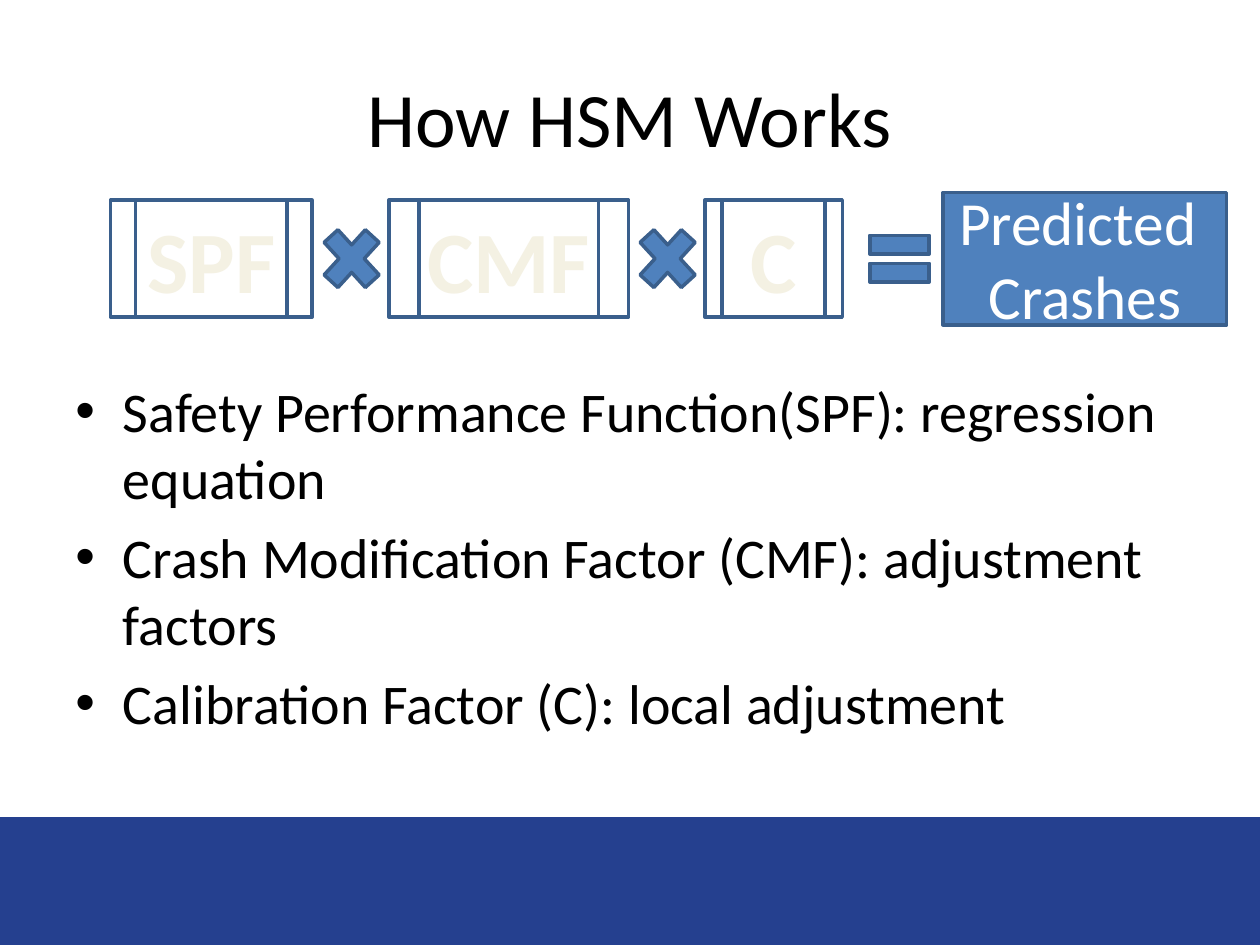
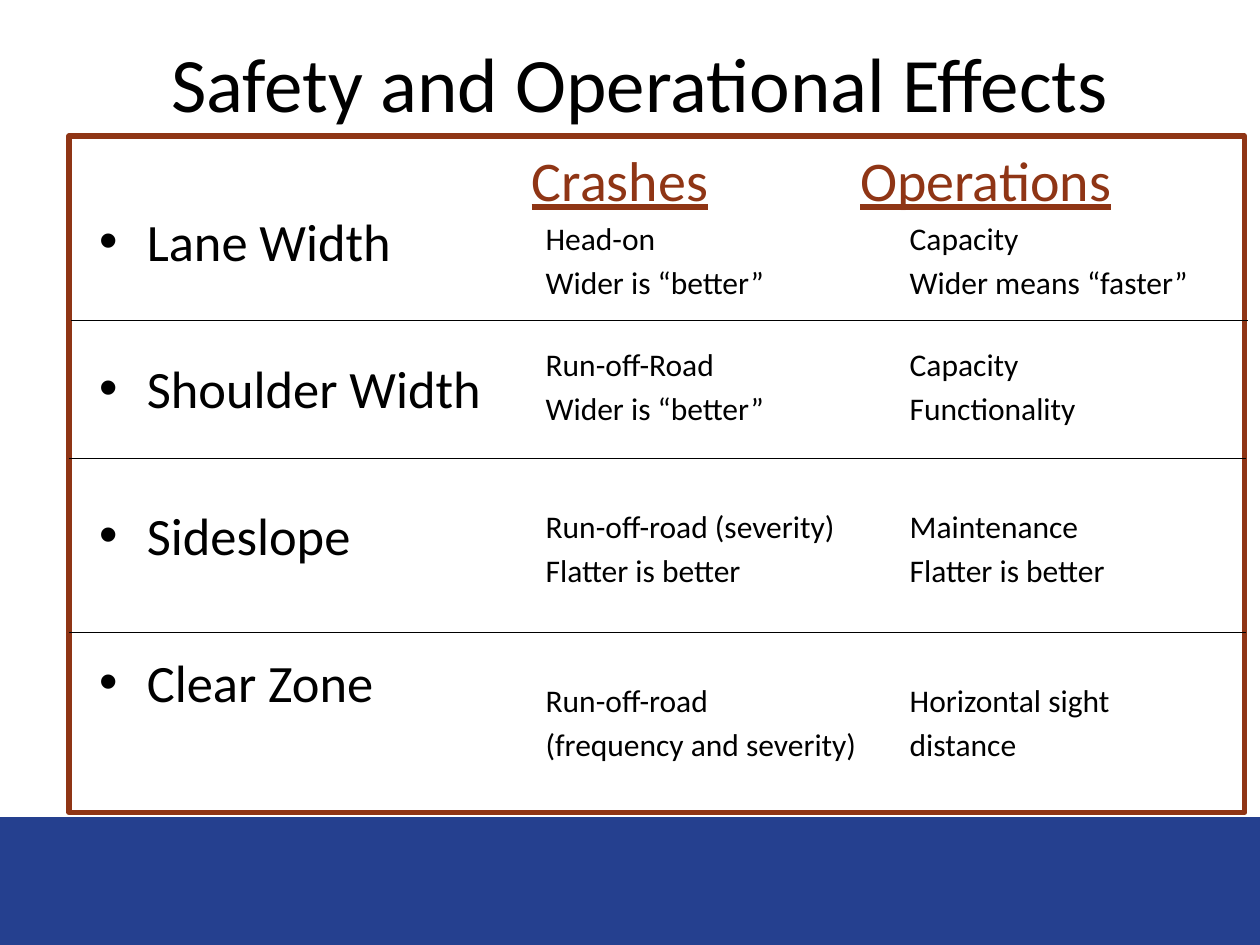
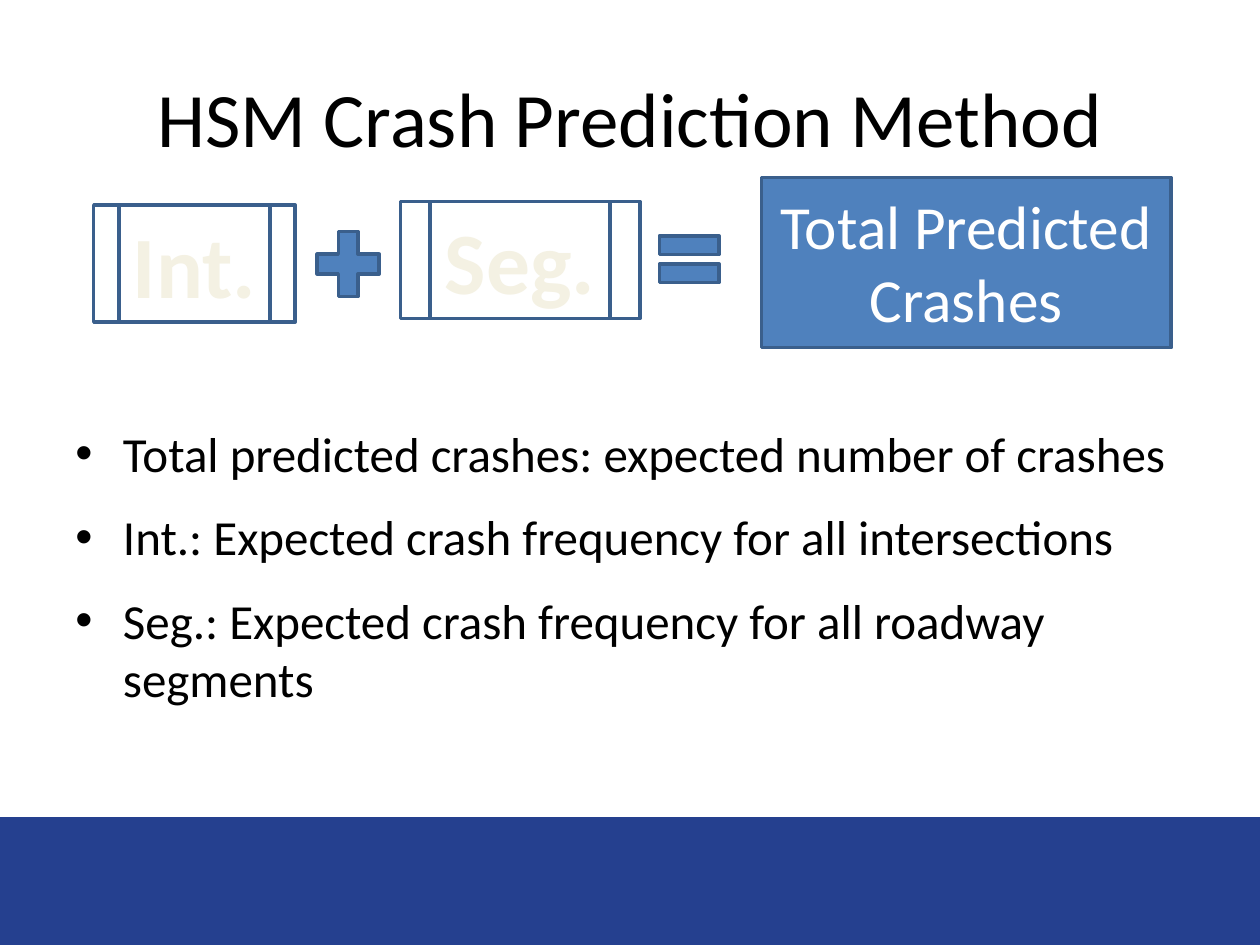
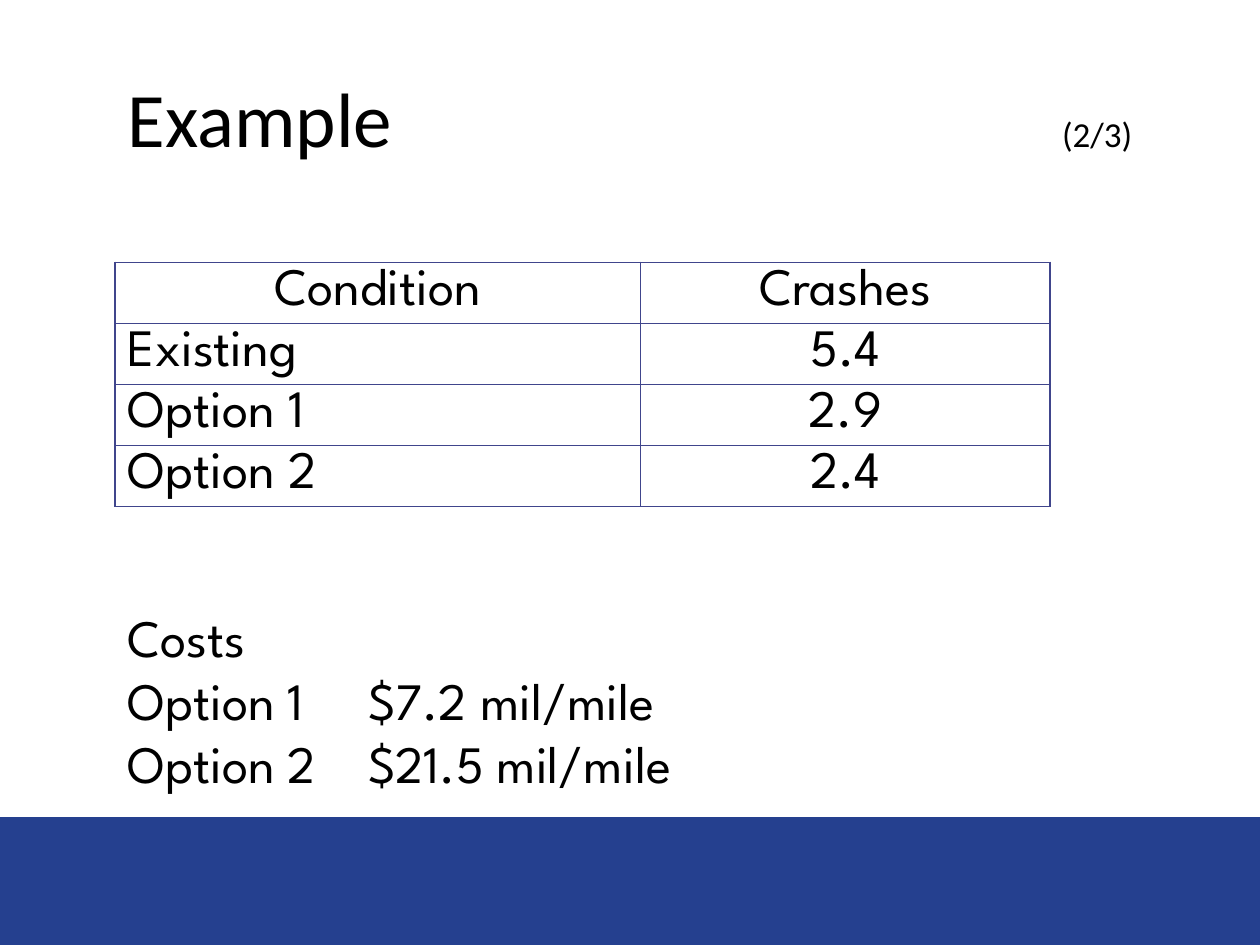
import pptx
import pptx.util
import pptx.dml.color
import pptx.enum.shapes
import pptx.enum.text
import pptx.oxml.ns
from lxml import etree

Cm = pptx.util.Cm
Pt = pptx.util.Pt
KIND = pptx.enum.shapes.MSO_SHAPE
ALIGN = pptx.enum.text.PP_ALIGN
ANCHOR = pptx.enum.text.MSO_ANCHOR
FIT = pptx.enum.text.MSO_AUTO_SIZE

BLACK, WHITE, CREAM = "000000", "FFFFFF", "F4F1E3"
NAVY, BLUE, EDGE = "25408F", "4F81BD", "3A5F8C"
RUST, GRID = "8F3515", "40458C"
SANS, ROUND = "Calibri", "League Spartan"
TITLE = (1.27, 0.76, 22.86, 3.18)
INDENT = 0.96
SIGNS = {
    "×": (KIND.MATH_MULTIPLY, 1.6, 1.75),
    "+": (KIND.MATH_PLUS, 1.7, 1.78),
    "=": (KIND.MATH_EQUAL, 1.63, 1.6),
}


def color(code):
    return pptx.dml.color.RGBColor.from_string(code)


def child(node, tag, **attrs):
    item = etree.SubElement(node, pptx.oxml.ns.qn("a:" + tag))
    for key, value in attrs.items():
        item.set(key, str(value))
    return item


def style(para, size, ink=BLACK, face=SANS, bold=False):
    font = para.font
    font.size = Pt(size)
    font.name = face
    font.bold = bold
    font.color.rgb = color(ink)


def bullet(para):
    props = para._p.get_or_add_pPr()
    props.set("marL", str(Cm(INDENT)))
    props.set("indent", str(-Cm(INDENT)))
    child(props, "buFont", typeface="Arial")
    child(props, "buChar", char="•")


def tabs(para, stops):
    group = child(para._p.get_or_add_pPr(), "tabLst")
    for stop in stops:
        child(group, "tab", pos=Cm(stop), algn="l")


def text(slide, box, lines, size, ink=BLACK, face=SANS, bold=False,
         align=ALIGN.LEFT, gap=0, dots=False, stops=(), wrap=True):
    frame = slide.shapes.add_textbox(*map(Cm, box)).text_frame
    frame.word_wrap = wrap
    for index, line in enumerate(lines):
        para = frame.add_paragraph() if index else frame.paragraphs[0]
        para.text = line
        para.alignment = align
        if dots:
            bullet(para)
        if stops:
            tabs(para, stops)
        if index and gap:
            para.space_before = Pt(gap)
        style(para, size, ink, face, bold)
    return frame


def shape(slide, kind, box, fill=None, edge=EDGE, width=2):
    item = slide.shapes.add_shape(kind, *map(Cm, box))
    item.shadow.inherit = False
    if fill:
        item.fill.solid()
        item.fill.fore_color.rgb = color(fill)
    else:
        item.fill.background()
    item.line.color.rgb = color(edge)
    item.line.width = Pt(width)
    return item


def rule(slide, left, top, width):
    line = slide.shapes.add_connector(
        pptx.enum.shapes.MSO_CONNECTOR.STRAIGHT,
        Cm(left), Cm(top), Cm(left + width), Cm(top))
    line.line.color.rgb = color(BLACK)
    line.line.width = Pt(0.75)
    child(line._element.spPr, "effectLst")


def page(deck, title, box=TITLE, stops=()):
    slide = deck.slides.add_slide(deck.slide_layouts[6])
    shape(slide, KIND.RECTANGLE, (0, 16.51, 25.4, 2.54), NAVY, NAVY)
    align = ALIGN.LEFT if stops else ALIGN.CENTER
    frame = text(slide, box, [title], 44, align=align, stops=stops)
    frame.vertical_anchor = ANCHOR.MIDDLE
    return slide, frame


def label(slide, mid, center, width, height, lines, size, ink, bold):
    box = (center - width / 2, mid - height / 2, width, height)
    frame = text(slide, box, lines, size, ink, bold=bold,
                 align=ALIGN.CENTER, wrap=False)
    frame.auto_size = FIT.SHAPE_TO_FIT_TEXT


def formula(slide, box, terms, signs, total):
    left, top, width, height = box
    mid = top + height / 2
    for name, shift, drop, span, wide in terms:
        shape(slide, KIND.FLOWCHART_PREDEFINED_PROCESS,
              (left + shift, mid + drop - 1.18, span, 2.36))
        label(slide, mid + drop, left + shift + span / 2, wide, 2.39,
              [name], 50, CREAM, True)
    for sign, shift, drop in signs:
        kind, wide, high = SIGNS[sign]
        shape(slide, kind,
              (left + shift, mid + drop - high / 2, wide, high), BLUE)
    lines, span = total
    start = left + width - span
    shape(slide, KIND.FLOWCHART_PROCESS, (start, top, span, height), BLUE)
    label(slide, mid, start + span / 2, span, 3.25, lines, 35, WHITE, False)


def works(deck):
    slide, _ = page(deck, "How HSM Works")
    text(slide, (1.27, 7.47, 22.86, 9.55), [
        "Safety Performance Function(SPF): regression equation",
        "Crash Modification Factor (CMF): adjustment factors",
        "Calibration Factor (C): local adjustment",
    ], 32, gap=6.4, dots=True)
    formula(slide, (2.23, 3.88, 22.5, 2.67),
            [("SPF", 0, 0, 4.06, 3.12), ("CMF", 5.61, 0, 4.83, 3.84),
             ("C", 11.98, 0, 2.77, 1.45)],
            [("×", 4.06, 0), ("×", 10.43, 0), ("=", 15.09, 0)],
            (["Predicted ", "Crashes"], 5.72))


def matrix(slide, box):
    left, top, width, height = box
    text(slide, (left + 0.36, top + 1.35, 21.59, 11.43),
         ["Lane Width", "Shoulder Width", "Sideslope", "Clear Zone"],
         30, gap=48, dots=True)
    rows = [
        (3.6, "Head-on", "Capacity"),
        (3.6, "Wider is “better”", "Wider means “faster”"),
        (24.9, "Run-off-Road", "Capacity"),
        (3.6, "Wider is “better”", "Functionality"),
        (46, "Run-off-road (severity)", "Maintenance"),
        (3.6, "Flatter is better", "Flatter is better"),
        (52.6, "Run-off-road", "Horizontal sight"),
        (3.6, "(frequency and severity)", "distance"),
    ]
    frame = text(slide, (left + 9.08, top + 0.07, 14.9, 12.9),
                 ["Crashes\tOperations"], 32, RUST, stops=[6.62])
    frame.paragraphs[0].font.underline = True
    for gap, crash, effect in rows:
        para = frame.add_paragraph()
        para.text = f"\t{crash}\t{effect}"
        tabs(para, [0.28, 7.62])
        para.space_before = Pt(gap)
        style(para, 18)
    shape(slide, KIND.RECTANGLE, box, edge=RUST, width=3)
    for shift, drop in [(0.05, 3.72), (0, 6.5), (0, 10.01)]:
        rule(slide, left + shift, top + drop, width + 0.02)


def effects(deck):
    slide, _ = page(deck, "Safety and Operational Effects",
                    (1.47, 0.25, 22.86, 2.79))
    matrix(slide, (1.39, 2.74, 23.7, 13.64))


def method(deck):
    slide, _ = page(deck, "HSM Crash Prediction Method")
    text(slide, (1.27, 8.41, 22.86, 8.61), [
        "Total predicted crashes: expected number of crashes",
        "Int.: Expected crash frequency for all intersections",
        "Seg.: Expected crash frequency for all roadway segments",
    ], 28, gap=14, dots=True)
    formula(slide, (1.89, 3.58, 21.72, 3.43),
            [("Int.", 0, 0.02, 4.06, 3.02),
             ("Seg.", 6.18, -0.05, 4.83, 3.58)],
            [("+", 4.28, 0.03), ("=", 11.19, -0.07)],
            (["Total Predicted ", "Crashes"], 8.26))


def border(cell):
    props = cell._tc.get_or_add_tcPr()
    for side in ("lnL", "lnR", "lnT", "lnB"):
        line = child(props, side, w=Pt(1))
        child(child(line, "solidFill"), "srgbClr", val=GRID)


def grid(slide, box, spans, rows):
    table = slide.shapes.add_table(
        len(rows), len(spans), *map(Cm, box)).table
    table.first_row = table.horz_banding = False
    for col, span in zip(table.columns, spans):
        col.width = Cm(span)
    for top, row in enumerate(rows):
        for side, word in enumerate(row):
            cell = table.cell(top, side)
            border(cell)
            cell.margin_bottom = Cm(-0.2)
            cell.fill.solid()
            cell.fill.fore_color.rgb = color(WHITE)
            para = cell.text_frame.paragraphs[0]
            para.text = word
            center = side or not top
            para.alignment = ALIGN.CENTER if center else ALIGN.LEFT
            style(para, 30, face=ROUND)


def example(deck):
    slide, frame = page(deck, "Example\t", stops=[18.83])
    frame.margin_left = Cm(1.31)
    run = frame.paragraphs[0].add_run()
    run.text = "(2/3)"
    run.font.size = Pt(20)
    grid(slide, (2.32, 5.29, 18.85, 4.92), [10.59, 8.26], [
        ("Condition", "Crashes"),
        ("Existing", "5.4"),
        ("Option 1", "2.9"),
        ("Option 2", "2.4"),
    ])
    text(slide, (2.32, 12.07, 14.99, 4.11), [
        "Costs",
        "Option 1\t$7.2 mil/mile",
        "Option 2\t$21.5 mil/mile",
    ], 30, face=ROUND, stops=[4.85])


def main():
    deck = pptx.Presentation()
    deck.slide_width, deck.slide_height = Cm(25.4), Cm(19.05)
    for build in (works, effects, method, example):
        build(deck)
    deck.save("out.pptx")


if __name__ == "__main__":
    main()
